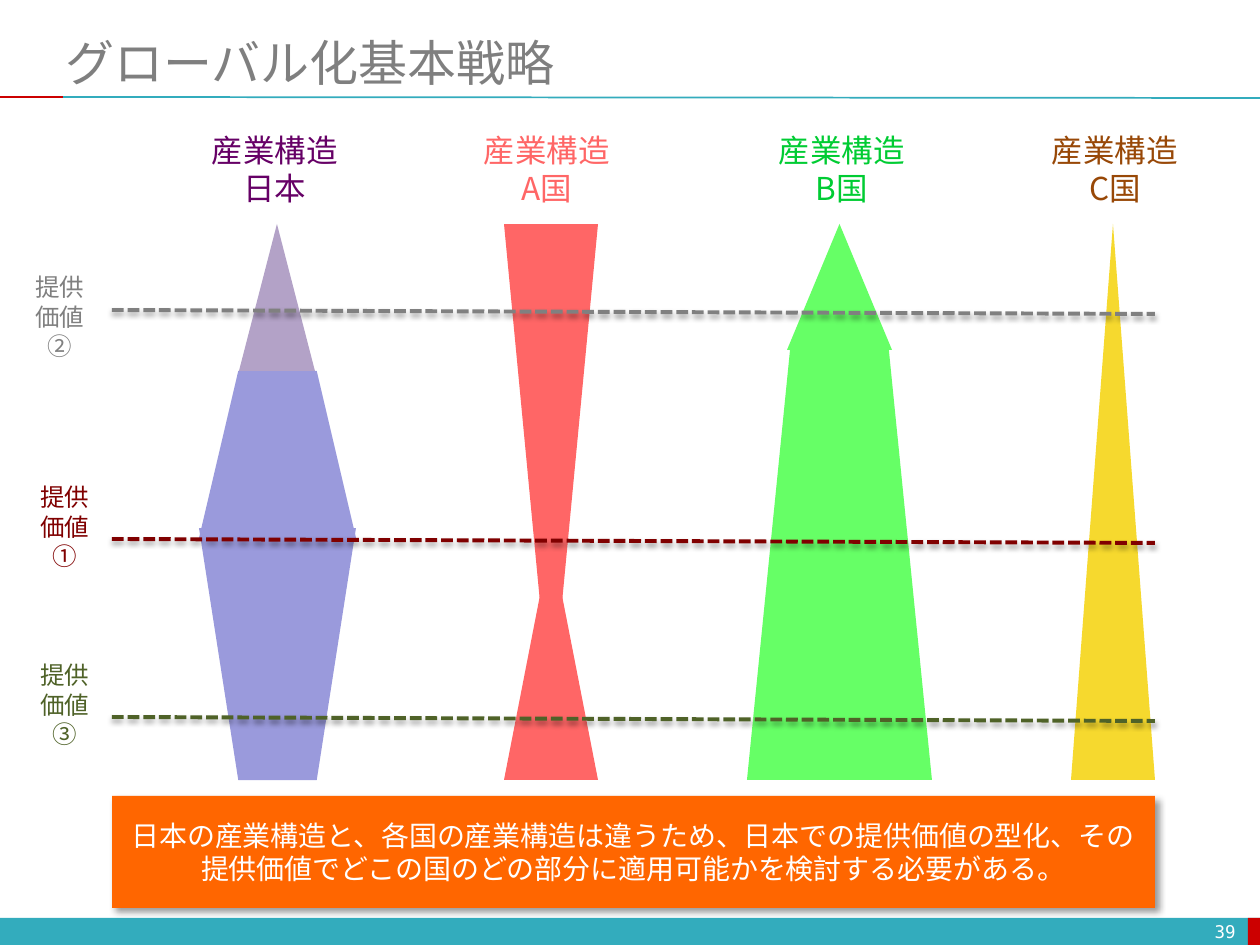
from dataclasses import dataclass

from lxml import etree
from pptx import Presentation
from pptx import util as u
from pptx.dml.color import RGBColor
from pptx.enum import dml, shapes, text
from pptx.oxml.ns import qn

PX = 914400 // 126
SHAPE = shapes.MSO_SHAPE
ALIGN = text.PP_ALIGN
ANCHOR = text.MSO_ANCHOR


@dataclass(frozen=True)
class Theme:
    font: str = "Noto Sans CJK JP"
    title_font: str = "Calibri"
    number_font: str = "DejaVu Sans Mono"
    title_size: int = 28
    heading_size: int = 18
    message_size: int = 16
    value_size: int = 14
    number_size: int = 10
    teal: str = "33ACBD"
    red: str = "CC0000"
    grey: str = "7F7F7F"
    white: str = "FFFFFF"
    orange: str = "FF6600"
    blue: str = "9A9ADC"
    mauve: str = "B3A2C7"
    coral: str = "FF6666"
    green: str = "66FF66"
    yellow: str = "F6D92E"


THEME = Theme()

# Each part: preset, left, top, width, height, colour, upside down, adjustment;
# left and top are counted from the corner of the country's figure.
COUNTRIES = [
    ("日本", "660066", 199, 157, [
        (SHAPE.TRAPEZOID, 0, 147, 157, 167, THEME.blue, False, 0.25),
        (SHAPE.ISOSCELES_TRIANGLE, 40, 0, 76, 147, THEME.mauve, False, None),
        (SHAPE.TRAPEZOID, 0, 304, 157, 252, THEME.blue, True, 0.25)]),
    ("A国", "FF6666", 504, 94, [
        (SHAPE.ISOSCELES_TRIANGLE, 0, 315, 94, 241, THEME.coral, False, None),
        (SHAPE.ISOSCELES_TRIANGLE, 0, 0, 94, 494, THEME.coral, True, None)]),
    ("B国", "00CC33", 747, 185, [
        (SHAPE.TRAPEZOID, 0, 126, 185, 430, THEME.green, False, 0.233),
        (SHAPE.ISOSCELES_TRIANGLE, 40, 0, 105, 126, THEME.green, False, None)]),
    ("C国", "984807", 1071, 84, [
        (SHAPE.ISOSCELES_TRIANGLE, 0, 0, 84, 556, THEME.yellow, False, None)]),
]
HEADING_LEFTS = [199, 471, 766, 1039]
# Each value: mark, colour, label left, label top, line top
VALUES = [("②", "808080", 23, 266, 310), ("①", "800000", 28, 476, 539),
          ("③", "4F6228", 28, 654, 717)]
MESSAGE = ("日本の産業構造と、各国の産業構造は違うため、日本での提供価値の型化、"
           "その提供価値でどこの国のどの部分に適用可能かを検討する必要がある。")


def px(*lengths):
    return [u.Emu(length * PX) for length in lengths]


def write(frame, words, font, size, colour, align):
    frame.text = words
    for para in frame.paragraphs:
        para.alignment = align
        for span in para.runs:
            span.font.name = font
            span.font.size = u.Pt(size)
            span.font.color.rgb = RGBColor.from_string(colour)
            east_asian = etree.SubElement(span.font._element, qn("a:ea"))
            east_asian.set("typeface", font)


def set_shadow(item, blur=0, distance=0, angle=0, opacity=0):
    """Give the shape an outer shadow, or none when the opacity is zero."""
    effects = etree.SubElement(item._element.spPr, qn("a:effectLst"))
    if opacity:
        shadow = etree.SubElement(
            effects, qn("a:outerShdw"), blurRad=str(u.Pt(blur)), dist=str(u.Pt(distance)),
            dir=str(angle * 60000), algn="tl", rotWithShape="0")
        black = etree.SubElement(shadow, qn("a:srgbClr"), val="000000")
        etree.SubElement(black, qn("a:alpha"), val=str(opacity * 1000))


def add_solid(page, preset, box, colour):
    solid = page.shapes.add_shape(preset, *px(*box))
    solid.fill.solid()
    solid.fill.fore_color.rgb = RGBColor.from_string(colour)
    solid.line.fill.background()
    return solid


def add_line(page, start, end, colour, width):
    line = page.shapes.add_connector(shapes.MSO_CONNECTOR.STRAIGHT, *px(*start, *end))
    line.line.color.rgb = RGBColor.from_string(colour)
    line.line.width = u.Pt(width)
    return line


def add_label(page, box, words, size, colour):
    label = page.shapes.add_textbox(*px(*box))
    label.text_frame.word_wrap = False
    label.text_frame.auto_size = text.MSO_AUTO_SIZE.SHAPE_TO_FIT_TEXT
    write(label.text_frame, words, THEME.font, size, colour, ALIGN.CENTER)


def add_footer(page, left, top, width, height):
    tab = 12
    for box, colour in [((left, top, width, height), THEME.teal),
                        ((left + width - tab, top, tab, height), THEME.red)]:
        add_solid(page, SHAPE.RECTANGLE, box, colour).shadow.inherit = False
    number = page.shapes.add_textbox(*px(left + width - 305, top - 2, 293, 30))
    number.text_frame.word_wrap = True
    number.text_frame.vertical_anchor = ANCHOR.MIDDLE
    write(number.text_frame, "39", THEME.number_font, THEME.number_size,
          THEME.white, ALIGN.RIGHT)


def add_title(page, left, top, width, height):
    rule, split = top + height + 6, 63
    set_shadow(add_line(page, (split, rule), (1260, rule + 1), THEME.teal, 1))
    set_shadow(add_line(page, (0, rule), (split, rule), THEME.red, 1))
    title = page.shapes.title
    title.left, title.top, title.width, title.height = px(left, top, width, height)
    frame = title.text_frame
    frame.auto_size = text.MSO_AUTO_SIZE.NONE
    frame.vertical_anchor = ANCHOR.MIDDLE
    write(frame, "グローバル化基本戦略", THEME.title_font, THEME.title_size,
          THEME.grey, ALIGN.LEFT)


def add_figure(page, left, top, parts):
    for preset, dx, dy, width, height, colour, upside_down, inset in parts:
        part = add_solid(page, preset, (left + dx, top + dy, width, height), colour)
        part.shadow.inherit = False
        part.rotation = 180 if upside_down else 0
        if inset is not None:
            part.adjustments[0] = inset


def add_countries(page, top):
    for (name, colour, left, _, parts), heading_left in zip(COUNTRIES, HEADING_LEFTS):
        add_figure(page, left, top + 99, parts)
        add_label(page, (heading_left, top, 152, 89), f"産業構造\n{name}",
                  THEME.heading_size, colour)


def add_values(page, left, width):
    for mark, colour, label_left, label_top, line_top in VALUES:
        add_label(page, (label_left, label_top, 74, 102), f"提供\n価値\n{mark}",
                  THEME.value_size, colour)
        line = add_line(page, (left, line_top), (left + width, line_top + 4), colour, 2.25)
        line.line.dash_style = dml.MSO_LINE.SQUARE_DOT
        set_shadow(line, 3.1, 1.6, 90, 38)


def add_message(page, *box):
    panel = add_solid(page, SHAPE.RECTANGLE, box, THEME.orange)
    set_shadow(panel, 4, 3, 45, 40)
    panel.text_frame.word_wrap = True
    panel.text_frame.vertical_anchor = ANCHOR.MIDDLE
    write(panel.text_frame, MESSAGE, THEME.font, THEME.message_size,
          THEME.white, ALIGN.CENTER)


def main():
    deck = Presentation()
    deck.slide_width, deck.slide_height = px(1260, 945)
    page = deck.slides.add_slide(deck.slide_layouts[5])
    add_footer(page, 0, 918, 1260, 27)
    add_title(page, 53, 33, 1197, 58)
    add_countries(page, 125)
    add_message(page, 112, 796, 1043, 112)
    add_values(page, 112, 1043)
    deck.save("out.pptx")


if __name__ == "__main__":
    main()
